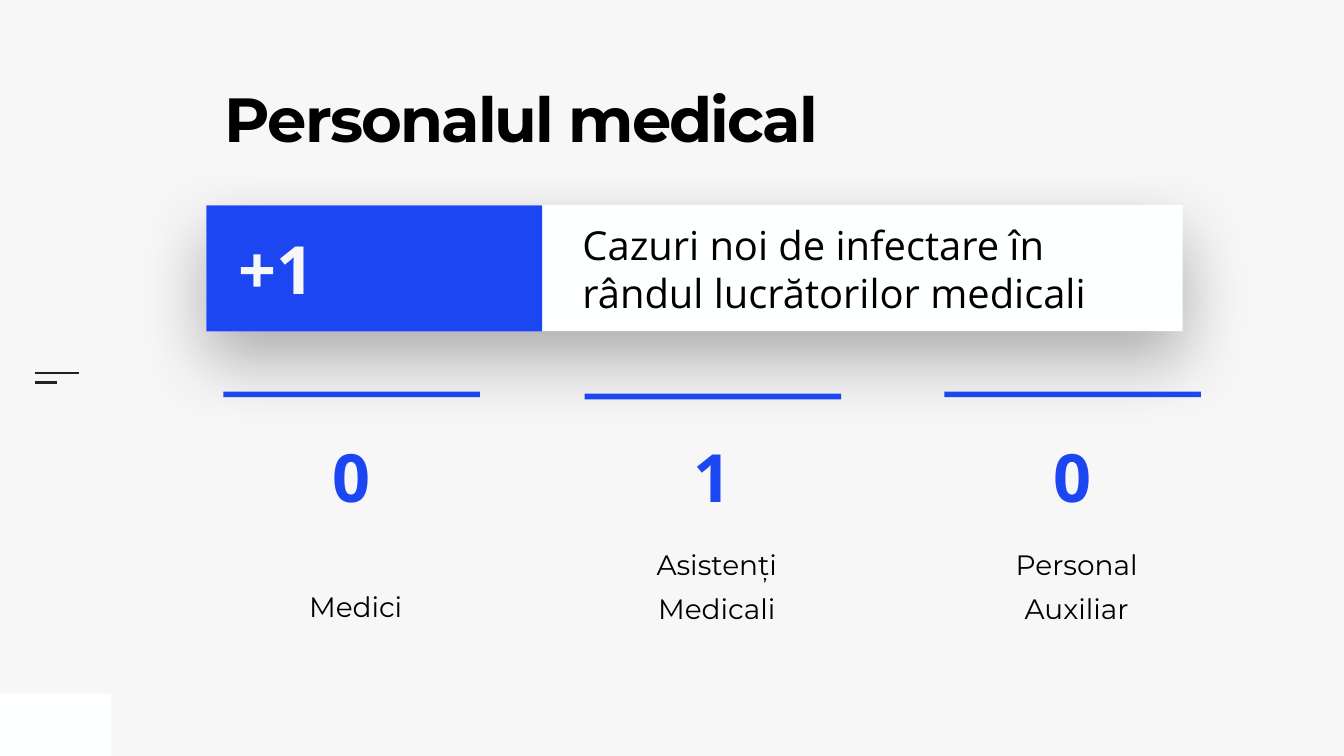
from dataclasses import dataclass
from typing import Optional

from lxml import etree
from pptx import Presentation
from pptx import util as u
from pptx.dml.color import RGBColor
from pptx.enum import shapes, text
from pptx.oxml import ns

Pt = u.Pt
BLUE = RGBColor(0x1D, 0x46, 0xF3)
WHITE = RGBColor(0xFE, 0xFF, 0xFF)
PALE = RGBColor(0xF7, 0xF7, 0xF7)
BLACK = RGBColor(0, 0, 0)
DARK = RGBColor(0x22, 0x22, 0x22)
LEFT, CENTER = text.PP_ALIGN.LEFT, text.PP_ALIGN.CENTER

COLUMN_W, BAR_H, CARD_H = 366.5, 8, 393
CARD_INSETS = (39.6, 51.1, 28.1, 62.6)
NUMBER_TOP, NUMBER_H = 615, 129.6


@dataclass
class Box:
    left: float
    top: float
    width: float
    height: float


@dataclass
class Style:
    size: float
    font: str
    color: RGBColor
    bold: bool = False
    align: text.PP_ALIGN = LEFT
    line_spacing: Optional[float] = None
    space_before: float = 0
    tracking: float = 0


@dataclass
class Column:
    left: float
    card_top: float
    bar_top: float
    number: str
    label: str


TITLE = Style(89, "Montserrat", BLACK, bold=True, line_spacing=0.8, tracking=-2.7)
LABEL = Style(40, "Montserrat", BLACK, align=CENTER, line_spacing=1.3, space_before=20)
HEADLINE = Style(57, "Open Sans", BLACK)
TOTAL = Style(95, "Open Sans", PALE, bold=True)
NUMBER = Style(95, "Open Sans", BLUE, bold=True, align=CENTER)

COLUMNS = [
    Column(319, 559.5, 559.5, "0", "Medici"),
    Column(835, 562.5, 562.5, "1", "Asistenți Medicali"),
    Column(1349, 562.5, 559.5, "0", "Personal Auxiliar"),
]


def emu(box: Box) -> list:
    return [Pt(v) for v in (box.left, box.top, box.width, box.height)]


def add_rect(s, box: Box, color: RGBColor):
    sp = s.shapes.add_shape(shapes.MSO_SHAPE.RECTANGLE, *emu(box))
    sp.shadow.inherit = False
    sp.fill.solid()
    sp.fill.fore_color.rgb = color
    sp.line.fill.background()
    return sp


def write(sp, content: str, style: Style, anchor, insets: tuple) -> None:
    tf = sp.text_frame
    tf.word_wrap = True
    tf.vertical_anchor = anchor
    tf.margin_left, tf.margin_top, tf.margin_right, tf.margin_bottom = map(Pt, insets)
    p = tf.paragraphs[0]
    p.alignment = style.align
    p.line_spacing = style.line_spacing
    p.space_before = Pt(style.space_before)
    r = p.add_run()
    r.text = content
    r.font.size = Pt(style.size)
    r.font.name = style.font
    r.font.bold = style.bold
    r.font.color.rgb = style.color
    if style.tracking:
        r._r.get_or_add_rPr().set("spc", str(round(style.tracking * 100)))


def add_text(s, box: Box, content: str, style: Style) -> None:
    """Text box centred vertically that grows with its text."""
    sp = s.shapes.add_textbox(*emu(box))
    write(sp, content, style, text.MSO_ANCHOR.MIDDLE, (7.2,) * 4)
    sp.text_frame.auto_size = text.MSO_AUTO_SIZE.SHAPE_TO_FIT_TEXT


def add_rule(s, left: float, top: float, width: float) -> None:
    line = s.shapes.add_connector(
        shapes.MSO_CONNECTOR.STRAIGHT, Pt(left), Pt(top), Pt(left + width), Pt(top))
    line.line.color.rgb = DARK
    line.line.width = Pt(3)
    etree.SubElement(line._element.spPr, ns.qn("a:effectLst"))


def add_soft_shadow(sp) -> None:
    effects = sp._element.spPr.find(ns.qn("a:effectLst"))
    shadow = etree.SubElement(
        effects, ns.qn("a:outerShdw"), blurRad=str(Pt(100)), dist=str(Pt(40)),
        dir="5400000", algn="ctr", rotWithShape="0")
    color = etree.SubElement(shadow, ns.qn("a:srgbClr"), val=str(BLACK))
    etree.SubElement(color, ns.qn("a:alpha"), val="30000")


def add_card(s, col: Column) -> None:
    card = add_rect(s, Box(col.left, col.card_top, COLUMN_W, CARD_H), PALE)
    write(card, col.label, LABEL, text.MSO_ANCHOR.BOTTOM, CARD_INSETS)


def add_figure(s, col: Column) -> None:
    add_rect(s, Box(col.left, col.bar_top, COLUMN_W, BAR_H), BLUE)
    add_text(s, Box(col.left, NUMBER_TOP, COLUMN_W, NUMBER_H), col.number, NUMBER)


def main() -> None:
    prs = Presentation()
    prs.slide_width, prs.slide_height = Pt(1920), Pt(1080)
    s = prs.slides.add_slide(prs.slide_layouts[6])
    s.background.fill.solid()
    s.background.fill.fore_color.rgb = PALE

    # Corner block and menu mark
    add_rect(s, Box(0, 991, 158.5, 89), WHITE)
    add_rule(s, 50, 533.5, 63)
    add_rule(s, 50, 546.5, 31.5)

    # Cards lie beneath the banner's shadow
    for col in COLUMNS:
        add_card(s, col)

    # Title
    title = s.shapes.add_textbox(*emu(Box(321, 134.6, 937, 196.5)))
    write(title, "Personalul medical", TITLE, text.MSO_ANCHOR.TOP, (0,) * 4)

    # Banner with the total
    add_soft_shadow(add_rect(s, Box(295, 293, 1394.6, 180), WHITE))
    add_text(s, Box(825, 306.7, 846.7, 152.6),
             "Cazuri noi de infectare în rândul lucrătorilor medicali", HEADLINE)
    add_rect(s, Box(295, 293.5, 479.5, 180), BLUE)
    add_text(s, Box(333.4, 318.2, 434, NUMBER_H), "+1", TOTAL)

    # Bars and numbers by staff group
    for col in COLUMNS:
        add_figure(s, col)

    prs.save("out.pptx")


if __name__ == "__main__":
    main()
